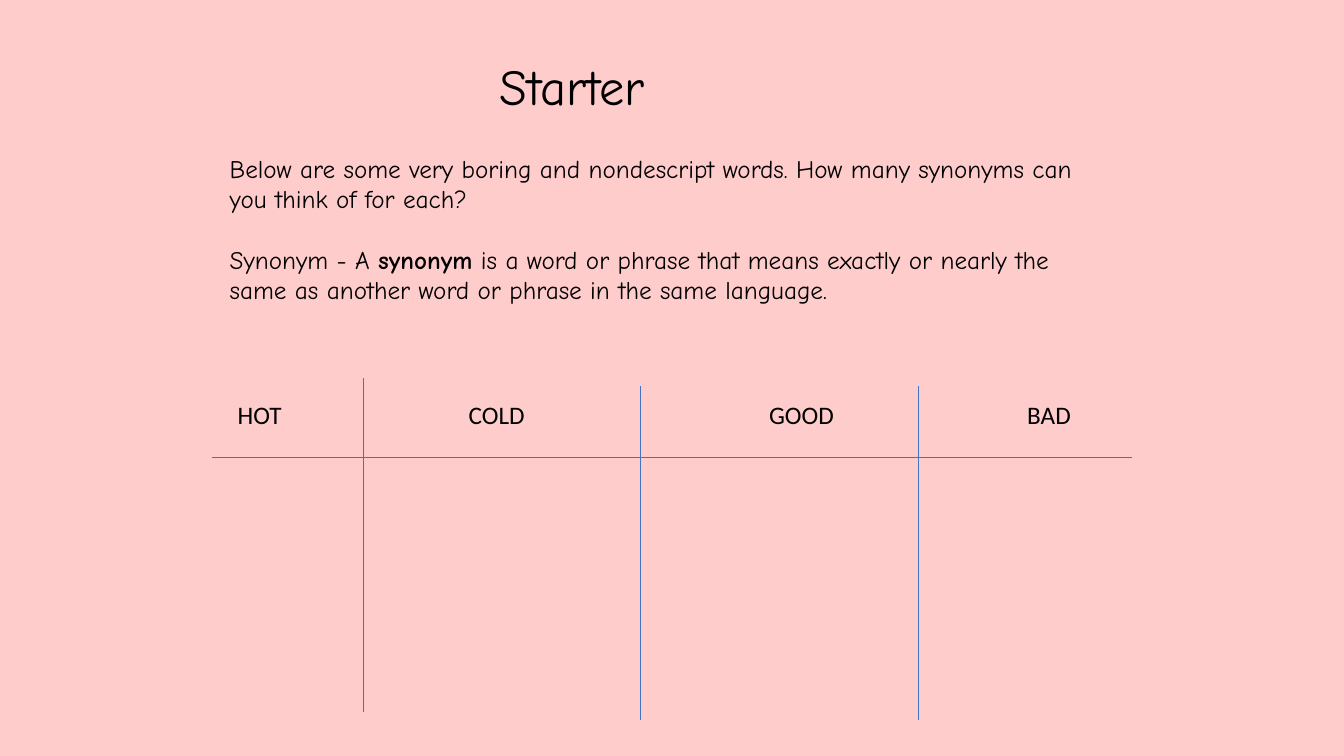
from pptx import Presentation
from pptx.dml.color import RGBColor
from pptx.enum.shapes import MSO_CONNECTOR as Conn
from pptx.util import Inches, Pt
from lxml import etree

# Content: each paragraph is a list of (text, bold) runs
TITLE = [[("Starter", False)]]
TASK = [
    [("Below are some very boring and nondescript words. "
      "How many synonyms can you think of for each?", False)],
    [("Synonym - A ", False), ("synonym", True),
     (" is a word or phrase that means exactly or nearly the same "
      "as another word or phrase in the same language.", False)],
]
HEADS = [("HOT", 2.26), ("COLD", 4.55), ("GOOD", 7.53), ("BAD", 10.09)]

# Column rules as (x, top)
RULES = [(3.6, 3.75), (6.35, 3.83), (9.11, 3.83)]
RULE_H = 3.31

PINK = RGBColor(0xFF, 0xCC, 0xCC)
BLACK = RGBColor(0, 0, 0)
BLUE = RGBColor(0x44, 0x72, 0xC4)
HAND = "Comic Neue"
PLAIN = "Calibri"
A_NS = "http://schemas.openxmlformats.org/drawingml/2006/main"

deck = Presentation()
deck.slide_width, deck.slide_height = Inches(13.33), Inches(7.5)
slide = deck.slides.add_slide(deck.slide_layouts[6])
slide.background.fill.solid()
slide.background.fill.fore_color.rgb = PINK


def add_text(paras, box, size, font, gap=0):
    frame = slide.shapes.add_textbox(*map(Inches, box)).text_frame
    frame.word_wrap = True
    for i, runs in enumerate(paras):
        para = frame.add_paragraph() if i else frame.paragraphs[0]
        if i:
            para.space_before = Pt(gap)
        for text, bold in runs:
            run = para.add_run()
            run.text = text
            run.font.name = font
            run.font.size = Pt(size)
            run.font.bold = bold
            run.font.color.rgb = BLACK


def add_line(*ends):
    line = slide.shapes.add_connector(Conn.STRAIGHT, *map(Inches, ends))
    line.line.color.rgb = BLUE
    line.line.width = Pt(0.5)
    etree.SubElement(line._element.spPr, f"{{{A_NS}}}effectLst")


# Title and task
add_text(TITLE, (4.86, 0.5, 6.61, 0.71), 36, HAND)
add_text(TASK, (2.18, 1.47, 8.74, 1.62), 18, HAND, 21.6)

# Column heads
for word, left in HEADS:
    add_text([[(word, False)]], (left, 3.91, 1.2, 0.4), 18, PLAIN)

# Grid lines
add_line(2.1, 4.54, 11.23, 4.54)
for x, top in RULES:
    add_line(x, top, x, top + RULE_H)

deck.save("out.pptx")
